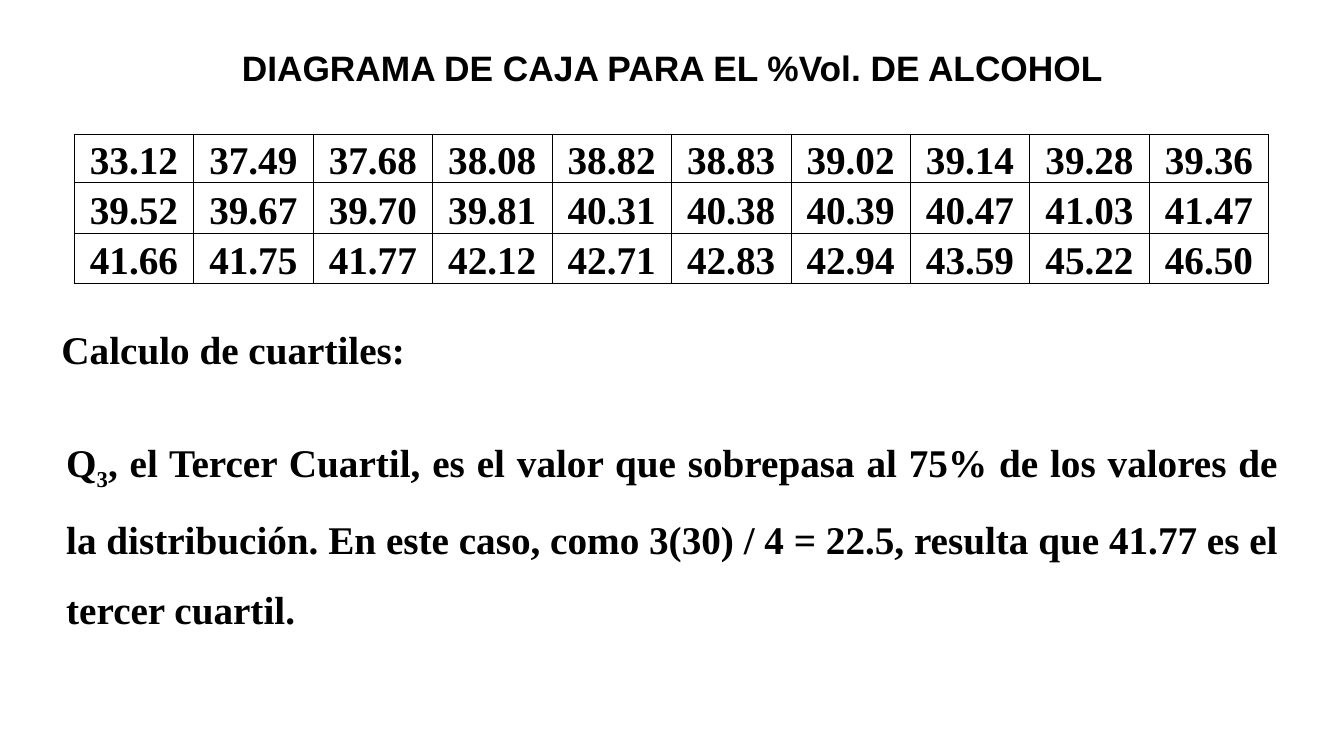
from dataclasses import dataclass

from lxml.etree import SubElement
from pptx import Presentation
from pptx.dml.color import RGBColor
from pptx.enum.text import MSO_ANCHOR as Anchor
from pptx.enum.text import MSO_AUTO_SIZE as AutoSize
from pptx.enum.text import PP_ALIGN as Align
from pptx.oxml.ns import qn
from pptx.slide import Slide
from pptx.table import _Cell as Cell
from pptx.text.text import _Paragraph as Paragraph
from pptx.util import Cm, Pt

BLACK = RGBColor(0, 0, 0)
WHITE = RGBColor(255, 255, 255)

TITLE_FONT = {"name": "Arial", "size": Pt(25.2), "bold": True}
BODY_FONT = {"name": "Times New Roman", "size": Pt(28), "bold": True}
CELL_FORMAT = {
    "vertical_anchor": Anchor.BOTTOM,
    "margin_left": Cm(0.03),
    "margin_right": Cm(0.03),
    "margin_top": Cm(0.03),
    "margin_bottom": 0,
}

ALCOHOL_VALUES = (
    "33.12 37.49 37.68 38.08 38.82 38.83 39.02 39.14 39.28 39.36",
    "39.52 39.67 39.70 39.81 40.31 40.38 40.39 40.47 41.03 41.47",
    "41.66 41.75 41.77 42.12 42.71 42.83 42.94 43.59 45.22 46.50",
)
ROW_HEIGHTS = (Cm(1.22), Cm(1.27), Cm(1.27))
COLUMN_WIDTH = Cm(3.01)


@dataclass(frozen=True)
class Piece:
    text: str
    baseline: int = 0


@dataclass(frozen=True)
class TextBlock:
    left: Cm
    top: Cm
    width: Cm
    height: Cm
    line_spacing: float
    pieces: tuple[Piece, ...]


TEXT_BLOCKS = (
    TextBlock(Cm(1.3), Cm(8.08), Cm(32.56), Cm(1.45), 1.0,
              (Piece("Calculo de cuartiles:"),)),
    TextBlock(Cm(1.42), Cm(10.24), Cm(31.04), Cm(5.44), 1.5, (
        Piece("Q"),
        Piece("3", -25000),
        Piece(", el Tercer Cuartil, es el valor que sobrepasa al 75% de los "
              "valores de la distribución. En este caso, como 3(30) / 4 = 22.5, "
              "resulta que 41.77 es el tercer cuartil."),
    )),
)


def apply_format(target: object, values: dict) -> None:
    for name, value in values.items():
        setattr(target, name, value)


def add_run(paragraph: Paragraph, piece: Piece, font: dict) -> None:
    run = paragraph.add_run()
    run.text = piece.text
    apply_format(run.font, font)
    run.font.color.rgb = BLACK
    if piece.baseline:
        run._r.get_or_add_rPr().set("baseline", str(piece.baseline))


def set_title(slide: Slide, text: str) -> None:
    title = slide.shapes.title
    apply_format(title, {"left": Cm(3.05), "top": Cm(1.14),
                         "width": Cm(27.79), "height": Cm(1.27)})
    apply_format(title.text_frame, {"vertical_anchor": Anchor.MIDDLE,
                                    "word_wrap": True,
                                    "auto_size": AutoSize.NONE})
    paragraph = title.text_frame.paragraphs[0]
    apply_format(paragraph, {"alignment": Align.CENTER, "line_spacing": 0.9})
    add_run(paragraph, Piece(text), TITLE_FONT)


def add_borders(cell: Cell) -> None:
    """Draw a thin black line on all four sides, ahead of the cell's fill."""
    properties = cell._tc.get_or_add_tcPr()
    for position, side in enumerate(("a:lnL", "a:lnR", "a:lnT", "a:lnB")):
        line = SubElement(properties, qn(side), w=str(Pt(0.5)))
        fill = SubElement(line, qn("a:solidFill"))
        SubElement(fill, qn("a:srgbClr"), val=str(BLACK))
        properties.insert(position, line)


def add_value_table(slide: Slide) -> None:
    rows = [line.split() for line in ALCOHOL_VALUES]
    column_count = len(rows[0])
    table = slide.shapes.add_table(
        len(rows), column_count, Cm(1.87), Cm(3.38),
        COLUMN_WIDTH * column_count, sum(ROW_HEIGHTS)).table
    apply_format(table, {"first_row": False, "horz_banding": False})
    for column in table.columns:
        column.width = COLUMN_WIDTH
    for row, height, values in zip(table.rows, ROW_HEIGHTS, rows):
        row.height = height
        for cell, value in zip(row.cells, values):
            apply_format(cell, CELL_FORMAT)
            cell.fill.solid()
            cell.fill.fore_color.rgb = WHITE
            add_borders(cell)
            paragraph = cell.text_frame.paragraphs[0]
            paragraph.alignment = Align.CENTER
            add_run(paragraph, Piece(value), BODY_FONT)


def add_text_block(slide: Slide, block: TextBlock) -> None:
    box = slide.shapes.add_textbox(block.left, block.top, block.width, block.height)
    apply_format(box.text_frame, {"word_wrap": True,
                                  "auto_size": AutoSize.SHAPE_TO_FIT_TEXT})
    paragraph = box.text_frame.paragraphs[0]
    apply_format(paragraph, {"alignment": Align.JUSTIFY, "space_after": Pt(10),
                             "line_spacing": block.line_spacing})
    for piece in block.pieces:
        add_run(paragraph, piece, BODY_FONT)


def main() -> None:
    presentation = Presentation()
    apply_format(presentation, {"slide_width": Cm(33.87), "slide_height": Cm(19.05)})
    slide = presentation.slides.add_slide(presentation.slide_layouts[5])
    set_title(slide, "DIAGRAMA DE CAJA PARA EL %Vol. DE ALCOHOL")
    add_value_table(slide)
    for block in TEXT_BLOCKS:
        add_text_block(slide, block)
    presentation.save("out.pptx")


if __name__ == "__main__":
    main()
